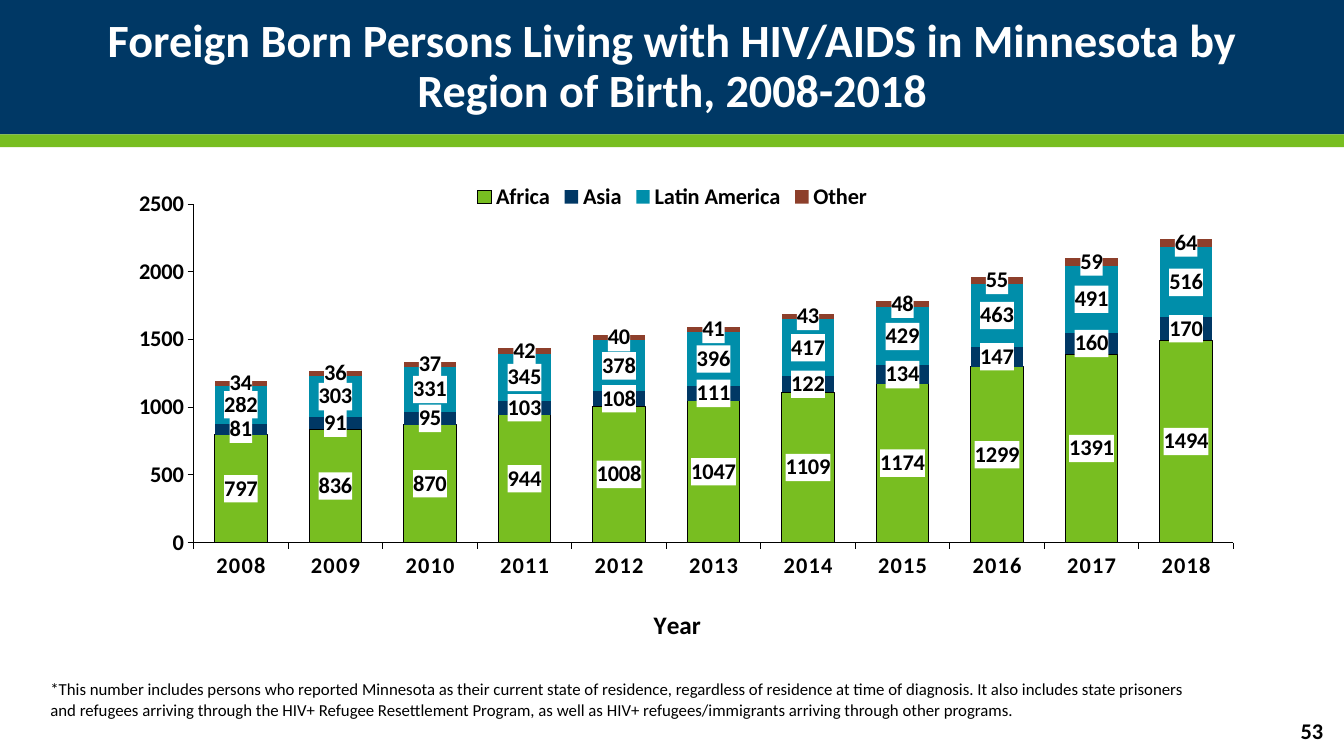
from dataclasses import dataclass

from pptx import Presentation
from pptx.chart.chart import Chart
from pptx.chart.data import CategoryChartData
from pptx.dml.color import RGBColor as RGB
from pptx.enum.chart import (XL_CHART_TYPE as ChartType, XL_LABEL_POSITION as LabelPos,
                             XL_LEGEND_POSITION as LegendPos, XL_TICK_MARK as Tick)
from pptx.enum.shapes import MSO_SHAPE as Preset
from pptx.enum.text import MSO_ANCHOR as Anchor, MSO_AUTO_SIZE as AutoSize, PP_ALIGN as Align
from pptx.oxml import parse_xml
from pptx.oxml.ns import nsdecls, qn
from pptx.util import Cm, Pt


@dataclass(frozen=True)
class Theme:
    font: str = "Calibri"
    navy: str = "003865"
    green: str = "78BE21"
    teal: str = "008EAA"
    rust: str = "8D3F2B"
    white: str = "FFFFFF"
    black: str = "000000"
    title: int = 33
    axis_title: int = 18
    body: int = 16
    note: int = 12
    line: float = 0.75


@dataclass(frozen=True)
class Box:
    left: float
    top: float
    width: float
    height: float

    def lengths(self) -> tuple:
        return Cm(self.left), Cm(self.top), Cm(self.width), Cm(self.height)


@dataclass(frozen=True)
class Band:
    box: Box
    color: str


@dataclass(frozen=True)
class TextItem:
    text: str
    box: Box
    size: int
    bold: bool
    align: Align
    anchor: Anchor


@dataclass(frozen=True)
class Region:
    name: str
    counts: tuple
    color: str
    outlined: bool = False


T = Theme()
WIDTH, HEIGHT = 33.87, 19.05
YEARS = range(2008, 2019)

BANDS = (
    Band(Box(0, 0, WIDTH, 3.39), T.navy),
    Band(Box(0, 3.39, WIDTH, 0.32), T.green),
)
REGIONS = (
    Region("Africa", (797, 836, 870, 944, 1008, 1047, 1109, 1174, 1299, 1391, 1494), T.green, True),
    Region("Asia", (81, 91, 95, 103, 108, 111, 122, 134, 147, 160, 170), T.navy),
    Region("Latin America", (282, 303, 331, 345, 378, 396, 417, 429, 463, 491, 516), T.teal),
    Region("Other", (34, 36, 37, 42, 40, 41, 43, 48, 55, 59, 64), T.rust),
)
TITLE = TextItem("Foreign Born Persons Living with HIV/AIDS in Minnesota by Region of Birth, 2008-2018",
                 Box(2.34, 0.43, 29.21, 2.54), T.title, True, Align.CENTER, Anchor.MIDDLE)
NOTES = (
    TextItem("*This number includes persons who reported Minnesota as their current state of residence, "
             "regardless of residence at time of diagnosis. It also includes state prisoners and refugees "
             "arriving through the HIV+ Refugee Resettlement Program, as well as HIV+ refugees/immigrants "
             "arriving through other programs.",
             Box(1.02, 16.99, 29.21, 1.63), T.note, False, Align.LEFT, Anchor.TOP),
    TextItem("53", Box(29.54, 17.91, 4.06, 1.02), T.body, True, Align.RIGHT, Anchor.MIDDLE),
)
CHART_BOX = Box(2.34, 4.32, 29.21, 12.09)


def style_font(font, size: int, bold: bool = True, color: str = T.black) -> None:
    font.name, font.size, font.bold = T.font, Pt(size), bold
    font.color.rgb = RGB.from_string(color)


def fill_text(sp, item: TextItem, color: str = T.black):
    tf = sp.text_frame
    tf.word_wrap, tf.auto_size = True, AutoSize.NONE
    tf.vertical_anchor = item.anchor
    p = tf.paragraphs[0]
    p.alignment = item.align
    r = p.add_run()
    r.text = item.text
    style_font(r.font, item.size, item.bold, color)
    return p


def add_title(s) -> None:
    sp = s.shapes.title
    sp.left, sp.top, sp.width, sp.height = TITLE.box.lengths()
    fill_text(sp, TITLE, T.white).line_spacing = 0.9
    for band in BANDS:
        bar = s.shapes.add_shape(Preset.RECTANGLE, *band.box.lengths())
        bar.shadow.inherit = False
        bar.fill.solid()
        bar.fill.fore_color.rgb = RGB.from_string(band.color)
        bar.line.fill.background()
        sp.element.addprevious(bar.element)


def style_line(line) -> None:
    line.color.rgb = RGB.from_string(T.black)
    line.width = Pt(T.line)


def manual_layout(target: str, **places: float):
    inner = f'<c:layoutTarget val="{target}"/>' if target else ""
    modes = "".join(f'<c:{k}Mode val="edge"/>' for k in ("x", "y"))
    values = "".join(f'<c:{k} val="{v}"/>' for k, v in places.items())
    return parse_xml(f'<c:layout {nsdecls("c")}><c:manualLayout>{inner}{modes}{values}'
                     '</c:manualLayout></c:layout>')


def style_axes(chart: Chart) -> None:
    for axis in (chart.category_axis, chart.value_axis):
        axis.has_major_gridlines = False
        axis.major_tick_mark, axis.minor_tick_mark = Tick.OUTSIDE, Tick.NONE
        style_font(axis.tick_labels.font, T.body)
        style_line(axis.format.line)
    values = chart.value_axis
    values.minimum_scale, values.maximum_scale, values.major_unit = 0, 2500, 500

    years = chart.category_axis
    years.has_title = True
    r = years.axis_title.text_frame.paragraphs[0].add_run()
    r.text = "Year"
    style_font(r.font, T.axis_title)
    title = chart.element.find(".//" + qn("c:catAx") + "/" + qn("c:title"))
    for layout in title.findall(qn("c:layout")):
        title.remove(layout)
    title.find(qn("c:tx")).addnext(manual_layout("", x=0.48, y=0.9))
    labels = chart.element.find(".//" + qn("c:catAx") + "/" + qn("c:txPr"))
    labels.find(".//" + qn("a:defRPr")).set("spc", "100")


def style_series(chart: Chart) -> None:
    plot = chart.plots[0]
    plot.gap_width, plot.overlap, plot.vary_by_categories = 79, 100, False
    for series, region in zip(plot.series, REGIONS):
        series.format.fill.solid()
        series.format.fill.fore_color.rgb = RGB.from_string(region.color)
        if region.outlined:
            style_line(series.format.line)
        else:
            series.format.line.fill.background()
        labels = series.data_labels
        labels.show_value, labels.position = True, LabelPos.CENTER
        style_font(labels.font, T.body)
    for labels in chart.element.iter(qn("c:dLbls")):
        labels.find(qn("c:txPr")).addprevious(parse_xml(
            f'<c:spPr {nsdecls("c", "a")}><a:solidFill><a:srgbClr val="{T.white}"/>'
            '</a:solidFill><a:ln><a:noFill/></a:ln></c:spPr>'))


def add_region_chart(s) -> None:
    data = CategoryChartData()
    data.categories = [str(year) for year in YEARS]
    for region in REGIONS:
        data.add_series(region.name, region.counts)
    chart = s.shapes.add_chart(ChartType.COLUMN_STACKED, *CHART_BOX.lengths(), data).chart
    style_font(chart.font, T.body)
    chart.has_title = False
    chart.has_legend = True
    chart.legend.position, chart.legend.include_in_layout = LegendPos.TOP, False
    style_font(chart.legend.font, T.body)
    style_axes(chart)
    style_series(chart)
    area = chart.element.find(".//" + qn("c:plotArea"))
    for layout in area.findall(qn("c:layout")):
        area.remove(layout)
    area.insert(0, manual_layout("inner", x=0.087, y=0.068, w=0.897, h=0.706))


def main() -> None:
    prs = Presentation()
    prs.slide_width, prs.slide_height = Cm(WIDTH), Cm(HEIGHT)
    s = prs.slides.add_slide(prs.slide_layouts[5])
    add_title(s)
    add_region_chart(s)
    for note in NOTES:
        fill_text(s.shapes.add_textbox(*note.box.lengths()), note)
    prs.save("out.pptx")


if __name__ == "__main__":
    main()
